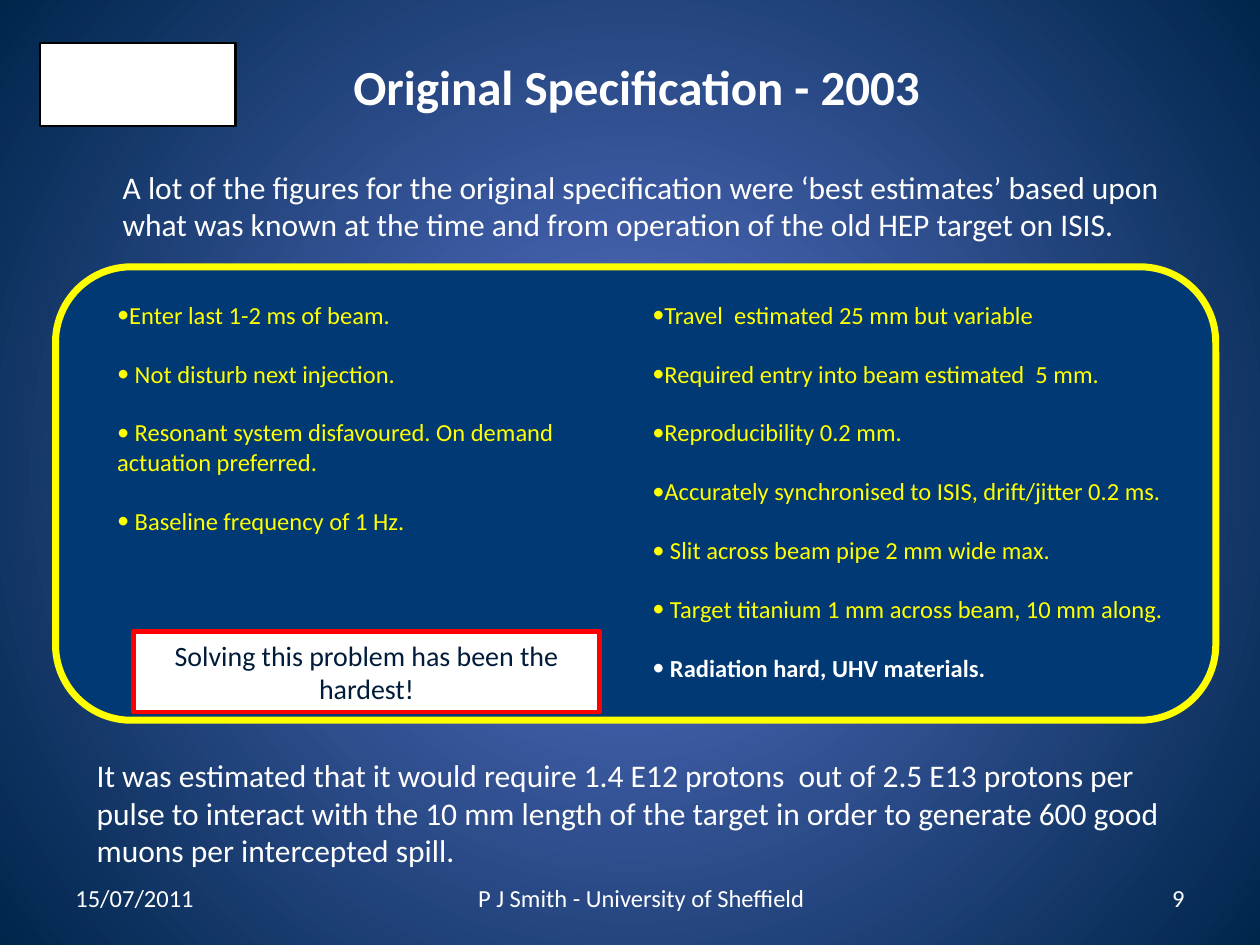
from lxml import etree
from pptx import Presentation
from pptx.dml.color import RGBColor
from pptx.enum.shapes import MSO_SHAPE
from pptx.enum.text import MSO_ANCHOR, MSO_AUTO_SIZE, PP_ALIGN
from pptx.oxml.ns import qn
from pptx.util import Cm, Pt

RECT, ROUNDED = MSO_SHAPE.RECTANGLE, MSO_SHAPE.ROUNDED_RECTANGLE
LEFT, CENTER, RIGHT = PP_ALIGN.LEFT, PP_ALIGN.CENTER, PP_ALIGN.RIGHT
COLORS = {
    "glow": "5973CA", "edge": "00264C", "panel": "003973", "ink": "001C3A",
    "white": "FFFFFF", "black": "000000", "yellow": "FFFF00", "red": "FF0000",
}


def rgb(name):
    return RGBColor.from_string(COLORS[name])


def write(sp, lines, size, color="white", align=LEFT, bullet=None, **font):
    """Fill a shape with one paragraph per line, one blank line's height apart."""
    tf = sp.text_frame
    tf.word_wrap = True
    tf.auto_size = MSO_AUTO_SIZE.NONE
    for i, line in enumerate(lines):
        p = tf.add_paragraph() if i else tf.paragraphs[0]
        p.alignment = align
        p.space_before = Pt(size * 1.2 if i else 0)
        if bullet:
            pPr = p._p.get_or_add_pPr()
            etree.SubElement(pPr, qn("a:buFont")).set("typeface", "Calibri")
            etree.SubElement(pPr, qn("a:buChar")).set("char", bullet)
        r = p.add_run()
        r.text = line
        r.font.color.rgb = rgb(color)
        for key, value in {"name": "Calibri", "size": Pt(size), **font}.items():
            setattr(r.font, key, value)


prs = Presentation()
prs.slide_width, prs.slide_height = Cm(25.4), Cm(19.05)
s = prs.slides.add_slide(prs.slide_layouts[1])

# Background: radial glow from the centre
fill = s.background.fill
fill.gradient()
for stop, name, position in zip(fill.gradient_stops, ("glow", "edge"), (0, 1)):
    stop.color.rgb = rgb(name)
    stop.position = position
grad = s.background._cSld.find(".//" + qn("a:gradFill"))
grad.remove(grad.find(qn("a:lin")))
circle = etree.SubElement(grad, qn("a:path"), path="circle")
etree.SubElement(circle, qn("a:fillToRect"), l="50000", t="50000", r="50000", b="50000")

# Title and introduction
title, body = s.shapes.title, s.placeholders[1]
for sp, box in ((title, (4.93, 0.91, 15.8, 1.65)), (body, (1.27, 3.25, 22.86, 2.46))):
    sp.left, sp.top, sp.width, sp.height = map(Cm, box)
title.text_frame.vertical_anchor = MSO_ANCHOR.MIDDLE
write(title, ["Original Specification - 2003"], 28, align=CENTER, bold=True)
pPr = body.text_frame.paragraphs[0]._p.get_or_add_pPr()
pPr.set("marL", str(Cm(0.95)))
pPr.set("indent", "0")
etree.SubElement(pPr, qn("a:buNone"))
write(body, ["A lot of the figures for the original specification were ‘best estimates’ "
             "based upon what was known at the time and from operation of the old HEP "
             "target on ISIS."], 18)

# Boxes: corner plate, specification panel, callout
boxes = {}
for name, kind, box, color, line, width in (
    ("plate", RECT, (0.81, 0.86, 3.94, 1.68), "white", "black", 1.25),
    ("panel", ROUNDED, (1.12, 5.38, 23.39, 9.14), "panel", "yellow", 4),
    ("callout", RECT, (2.69, 12.73, 9.4, 1.63), "white", "red", 2.5),
):
    sp = boxes[name] = s.shapes.add_shape(kind, *map(Cm, box))
    sp.shadow.inherit = False
    sp.fill.solid()
    sp.fill.fore_color.rgb = rgb(color)
    sp.line.color.rgb = rgb(line)
    sp.line.width = Pt(width)
write(boxes["callout"], ["Solving this problem has been the hardest!"], 16, "ink", CENTER)

# Text boxes
requirements = [
    "Enter last 1-2 ms of beam.",
    " Not disturb next injection.",
    " Resonant system disfavoured. On demand actuation preferred.",
    " Baseline frequency of 1 Hz.",
]
parameters = [
    "Travel  estimated 25 mm but variable",
    "Required entry into beam estimated  5 mm.",
    "Reproducibility 0.2 mm.",
    "Accurately synchronised to ISIS, drift/jitter 0.2 ms.",
    " Slit across beam pipe 2 mm wide max.",
    " Target titanium 1 mm across beam, 10 mm along.",
    " Radiation hard, UHV materials.",
]
estimate = ["It was estimated that it would require 1.4 E12 protons  out of 2.5 E13 protons "
            "per pulse to interact with the 10 mm length of the target in order to generate "
            "600 good muons per intercepted spill."]
listed = {"size": 14, "color": "yellow", "bullet": "•"}
for box, lines, style in (
    ((2.11, 5.92, 9.6, 6.25), requirements, listed),
    ((12.9, 5.92, 11.73, 8.64), parameters, listed),
    ((1.27, 17.68, 3.25, 0.99), ["15/07/2011"], {"size": 14}),
    ((22.05, 17.68, 2.08, 0.99), ["9"], {"size": 14, "align": RIGHT}),
    ((4.98, 17.68, 15.9, 0.99), ["P J Smith - University of Sheffield"],
     {"size": 14, "align": CENTER}),
    ((1.7, 15.11, 22.2, 3.33), estimate, {"size": 18}),
):
    sp = s.shapes.add_textbox(*map(Cm, box))
    write(sp, lines, **style)
    if lines is parameters:
        font = sp.text_frame.paragraphs[-1].runs[0].font
        font.bold = True
        font.color.rgb = rgb("white")

prs.save("out.pptx")
